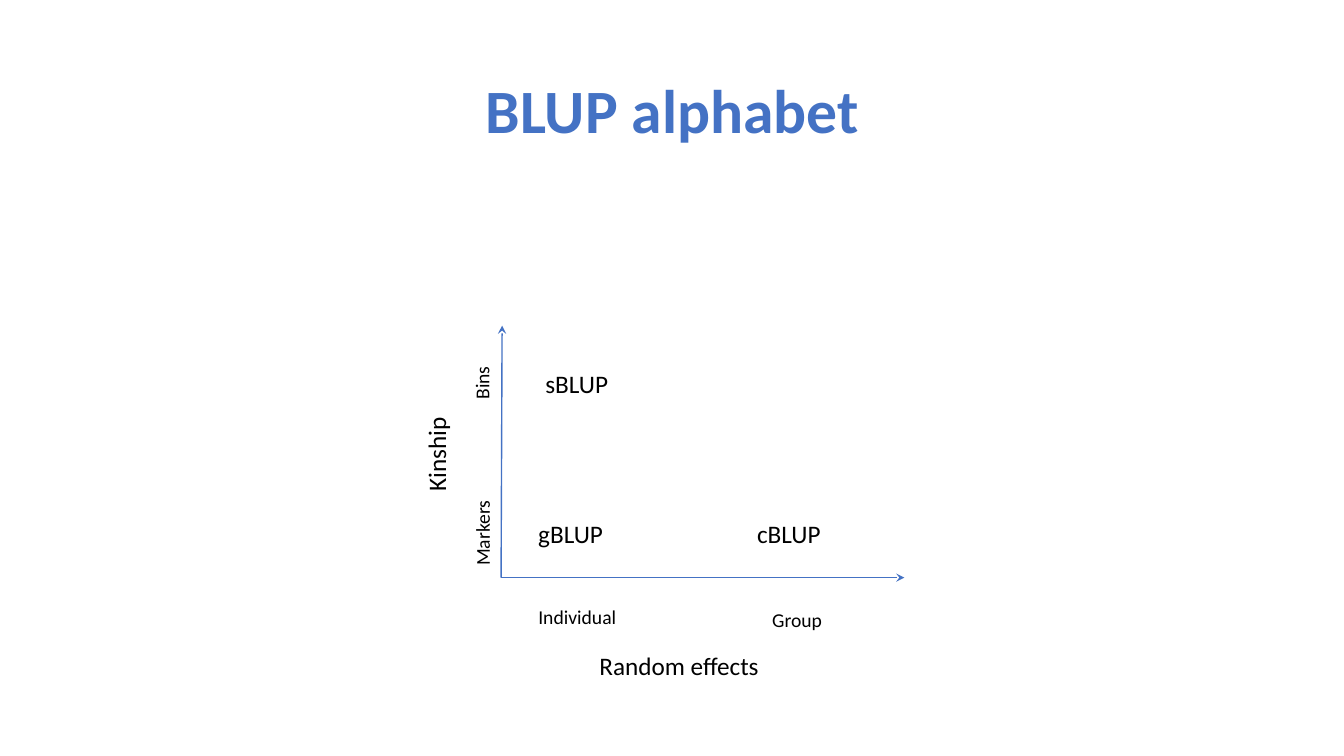
import dataclasses

import pptx
import pptx.dml.color
import pptx.enum.shapes
import pptx.enum.text
import pptx.oxml
import pptx.oxml.ns
import pptx.util

EMU_PER_PX = 9144  # 100 px to the inch
ALIGN = pptx.enum.text.PP_ALIGN
ANCHOR = pptx.enum.text.MSO_ANCHOR


@dataclasses.dataclass(frozen=True)
class Theme:
    font: str = "Calibri"
    accent: str = "4472C4"
    ink: str = "000000"
    title_size: int = 44
    label_size: int = 18
    tick_size: int = 14
    axis_width: int = 1


THEME = Theme()


def px(length):
    return pptx.util.Emu(length * EMU_PER_PX)


def rgb(code):
    return pptx.dml.color.RGBColor.from_string(code)


def add_text(page, text, left, top, width, height, size,
             align=ALIGN.LEFT, rotation=0):
    box = page.shapes.add_textbox(px(left), px(top), px(width), px(height))
    box.rotation = rotation
    frame = box.text_frame
    frame.word_wrap = True
    frame.text = text
    para = frame.paragraphs[0]
    para.alignment = align
    font = para.runs[0].font
    font.name = THEME.font
    font.size = pptx.util.Pt(size)
    font.color.rgb = rgb(THEME.ink)
    return box


def add_title(page, text):
    box = add_text(page, text, 92, 40, 1150, 145, THEME.title_size, ALIGN.CENTER)
    box.text_frame.vertical_anchor = ANCHOR.MIDDLE
    para = box.text_frame.paragraphs[0]
    para.line_spacing = 0.9
    para.runs[0].font.bold = True
    para.runs[0].font.color.rgb = rgb(THEME.accent)


def add_axis(page, start, end):
    axis = page.shapes.add_connector(
        pptx.enum.shapes.MSO_CONNECTOR.STRAIGHT, *map(px, start + end))
    axis.line.color.rgb = rgb(THEME.accent)
    axis.line.width = pptx.util.Pt(THEME.axis_width)
    arrowhead = pptx.oxml.parse_xml(
        f'<a:tailEnd {pptx.oxml.ns.nsdecls("a")} type="stealth"/>')
    axis.line._get_or_add_ln().append(arrowhead)
    no_effects = pptx.oxml.parse_xml(
        f'<a:effectLst {pptx.oxml.ns.nsdecls("a")}/>')
    axis._element.spPr.append(no_effects)


def main():
    deck = pptx.Presentation()
    deck.slide_width, deck.slide_height = px(1333), px(750)
    page = deck.slides.add_slide(deck.slide_layouts[6])

    add_title(page, "BLUP alphabet")

    # Axes from a shared origin
    origin = (497, 573)
    for end in ((897, 573), (498, 323)):
        add_axis(page, origin, end)

    # Methods placed in the plane
    for name, left, top, width in (
            ("gBLUP", 524, 509, 96),
            ("sBLUP", 531, 360, 89),
            ("cBLUP", 741, 509, 119)):
        add_text(page, name, left, top, width, 40, THEME.label_size)

    # Kinship categories, read upwards
    for name, left, top, width in (("Bins", 445, 363, 66),
                                   ("Markers", 423, 512, 111)):
        add_text(page, name, left, top, width, 34, THEME.tick_size,
                 ALIGN.CENTER, rotation=270)

    # Random effect categories
    for name, left, top, width in (("Individual", 524, 595, 129),
                                   ("Group", 756, 598, 89)):
        add_text(page, name, left, top, width, 34, THEME.tick_size)

    # Axis titles
    add_text(page, "Random effects", 575, 640, 197, 40, THEME.label_size,
             ALIGN.CENTER)
    add_text(page, "Kinship", 367, 431, 131, 40, THEME.label_size,
             ALIGN.CENTER, rotation=270)

    deck.save("out.pptx")


if __name__ == "__main__":
    main()
